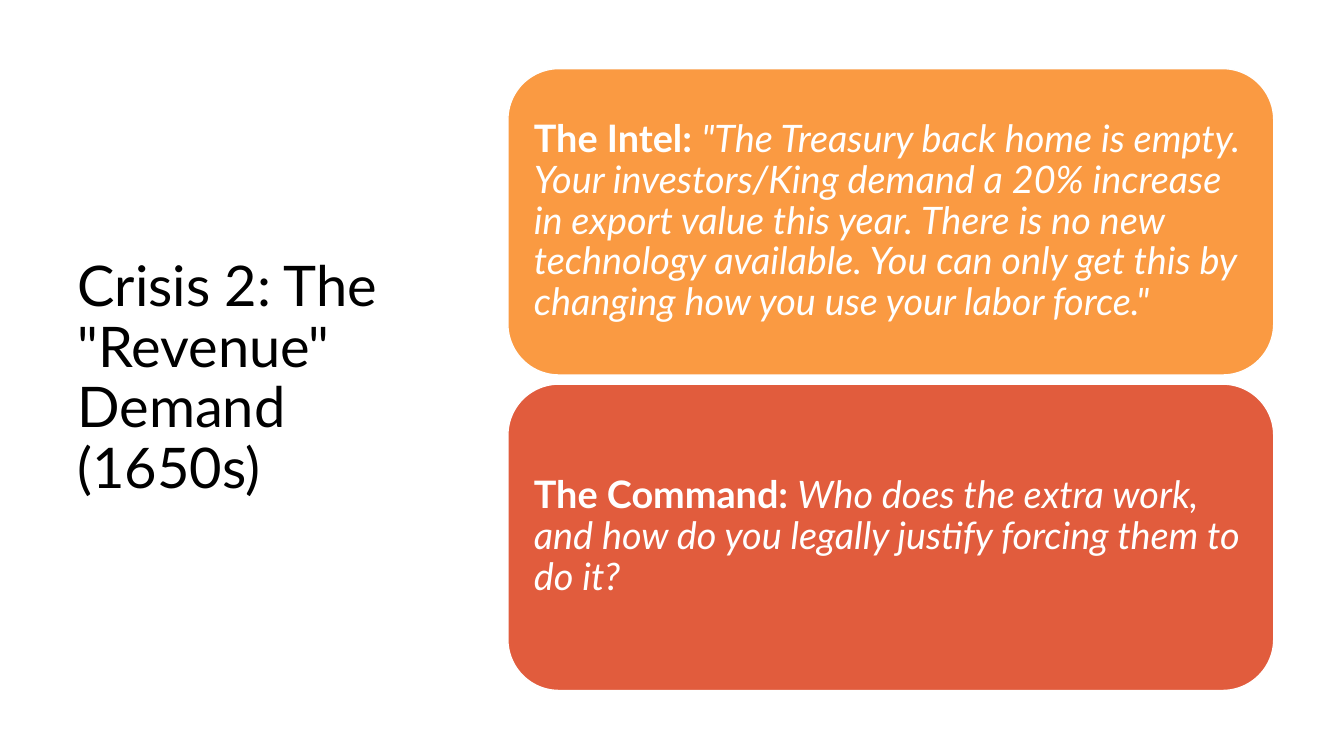
import pptx
import pptx.util
import pptx.dml.color
import pptx.enum.shapes
import pptx.enum.text
from pptx.util import Cm

CARDS = [
    ("FA9A42", "The Intel:\u00a0".replace("\u00a0", " "),
     '"The Treasury back home is empty. Your investors/King demand a 20% increase '
     'in export value this year. There is no new technology available. You can only '
     'get this by changing how you use your labor force."'),
    ("E15C3D", "The Command: ",
     "Who does the extra work, and how do you legally justify forcing them to do it?"),
]
CARD_LEFT, CARD_TOP = 12.8, 1.73
CARD_WIDTH, CARD_HEIGHT, CARD_STEP = 19.3, 7.72, 7.95


def colour(value):
    return pptx.dml.color.RGBColor.from_string(value)


def add_text(paragraph, text, size=27, ink="FFFFFF", bold=False, italic=False):
    run = paragraph.add_run()
    run.text = text
    run.font.name = "Lato"
    run.font.size = pptx.util.Pt(size)
    run.font.color.rgb = colour(ink)
    run.font.bold = bold
    run.font.italic = italic


def prepare_frame(frame):
    """Set wrapping, middle anchoring and tight left-aligned lines; return the paragraph."""
    frame.word_wrap = True
    frame.auto_size = pptx.enum.text.MSO_AUTO_SIZE.NONE
    frame.vertical_anchor = pptx.enum.text.MSO_ANCHOR.MIDDLE
    paragraph = frame.paragraphs[0]
    paragraph.alignment = pptx.enum.text.PP_ALIGN.LEFT
    paragraph.line_spacing = 0.9
    return paragraph


def add_title(slide, text):
    title = slide.shapes.title
    title.left, title.top = Cm(1.7), Cm(1.52)
    title.width, title.height = Cm(9.7), Cm(16.08)
    add_text(prepare_frame(title.text_frame), text, size=40, ink="000000")


def add_card(slide, top, fill, label, message):
    card = slide.shapes.add_shape(
        pptx.enum.shapes.MSO_SHAPE.ROUNDED_RECTANGLE,
        Cm(CARD_LEFT), Cm(top), Cm(CARD_WIDTH), Cm(CARD_HEIGHT))
    card.shadow.inherit = False
    card.fill.solid()
    card.fill.fore_color.rgb = colour(fill)
    card.line.color.rgb = colour("FFFFFF")
    card.line.width = pptx.util.Pt(1)
    frame = card.text_frame
    frame.margin_left = frame.margin_right = Cm(0.28)
    frame.margin_top = frame.margin_bottom = Cm(0.28)
    paragraph = prepare_frame(frame)
    add_text(paragraph, label, bold=True)
    add_text(paragraph, message, italic=True)


def main():
    deck = pptx.Presentation()
    deck.slide_width, deck.slide_height = Cm(33.87), Cm(19.05)
    slide = deck.slides.add_slide(deck.slide_layouts[5])
    add_title(slide, 'Crisis 2: The "Revenue" Demand (1650s)')
    for index, (fill, label, message) in enumerate(CARDS):
        add_card(slide, CARD_TOP + index * CARD_STEP, fill, label, message)
    deck.save("out.pptx")


if __name__ == "__main__":
    main()
